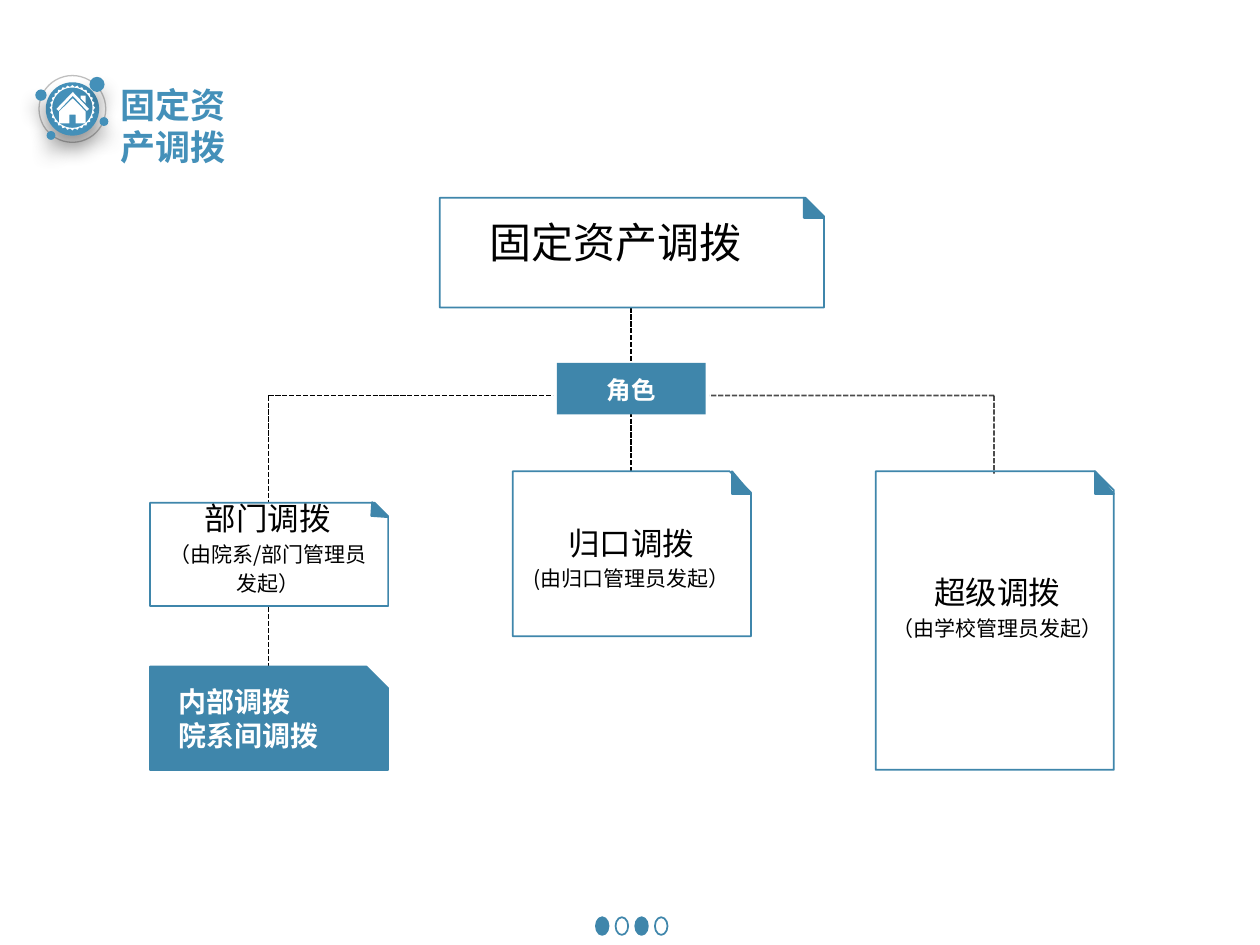
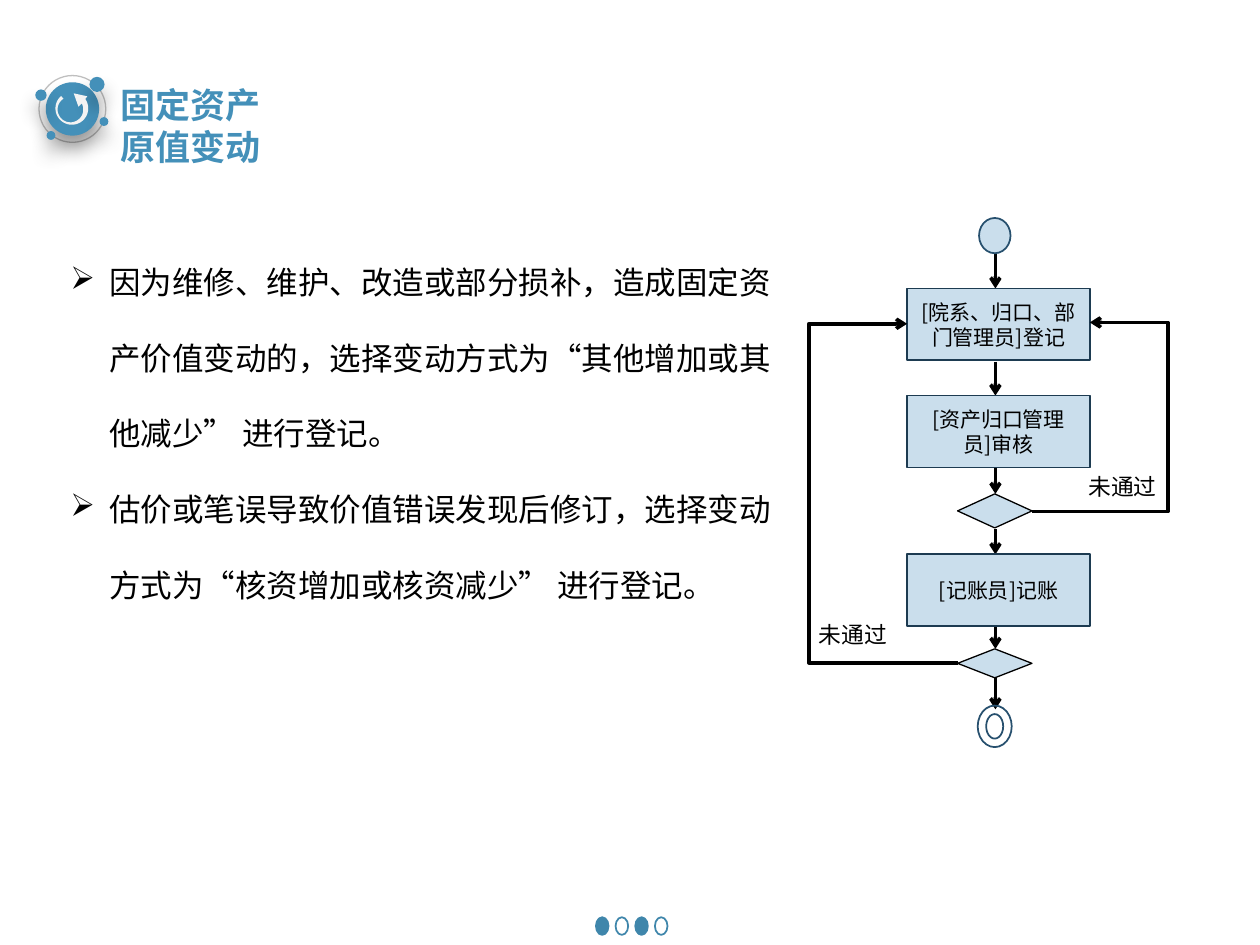
from dataclasses import dataclass
from math import cos, pi, sin
from typing import NamedTuple

from lxml import etree
from pptx import Presentation
from pptx.dml.color import RGBColor
from pptx.enum.dml import MSO_LINE
from pptx.enum.shapes import MSO_CONNECTOR, MSO_SHAPE
from pptx.enum.text import MSO_ANCHOR, PP_ALIGN
from pptx.oxml.ns import qn
from pptx.util import Emu, Inches, Pt

ELLIPSE, RECTANGLE, DIAMOND = MSO_SHAPE.OVAL, MSO_SHAPE.RECTANGLE, MSO_SHAPE.DIAMOND
SNIPPED, FOLD, DONUT = MSO_SHAPE.SNIP_1_RECTANGLE, MSO_SHAPE.RIGHT_TRIANGLE, MSO_SHAPE.DONUT
STRAIGHT, ELBOW = MSO_CONNECTOR.STRAIGHT, MSO_CONNECTOR.ELBOW
LEFT, CENTER = PP_ALIGN.LEFT, PP_ALIGN.CENTER
TOP, MIDDLE = MSO_ANCHOR.TOP, MSO_ANCHOR.MIDDLE
DASH = MSO_LINE.SQUARE_DOT

FONT = "Noto Sans CJK SC"
COLORS = {
    "theme": "3F86AB", "title": "4490B9", "ring": "BFBFBF", "step": "CADEEC",
    "step_edge": "1D3B51", "end_edge": "27506E", "black": "000000",
    "white": "FFFFFF", "arrow": "F3F3F3",
}

# The slide is a grid of 100 columns by 75 square rows
SLIDE_WIDTH, SLIDE_HEIGHT = Inches(10), Inches(7.5)
CELL = SLIDE_WIDTH // 100

Point = tuple[float, float]


class Box(NamedTuple):
    left: float
    top: float
    width: float
    height: float


class Line(NamedTuple):
    text: str
    size: float
    color: str = "black"
    bold: bool = False


@dataclass
class TextStyle:
    align: PP_ALIGN = LEFT
    anchor: MSO_ANCHOR = TOP
    inset: bool = True
    wrap: bool = True
    spacing: float = 1.0
    gap: float = 0.0
    bullet: str = ""


@dataclass
class Card:
    box: Box
    fold: Box
    text_box: Box
    lines: list[Line]
    snip: float = 0.13
    fold_turn: float = 0
    filled: bool = True


@dataclass
class Link:
    begin: Point
    end: Point
    arrow: bool = False
    opacity: int = 100
    elbow: float | None = None


PLAIN = TextStyle()
TITLE = TextStyle(wrap=False)
CARD_TEXT = TextStyle(CENTER, MIDDLE, inset=False, gap=2.4)
HEADING = TextStyle(CENTER, inset=False, spacing=0.9)
STEP_TEXT = TextStyle(CENTER, MIDDLE)
BULLETS = TextStyle(spacing=2.0, bullet="➢")


def grid(cells: float) -> Emu:
    return Emu(round(cells * CELL))


def rgb(name: str) -> RGBColor:
    return RGBColor.from_string(COLORS[name])


def add_child(parent, tag: str, **attributes):
    child = etree.SubElement(parent, qn(tag))
    for key, value in attributes.items():
        child.set(key, str(value))
    return child


# Text
def write(shape, lines: list[Line], style: TextStyle) -> None:
    frame = shape.text_frame
    frame.word_wrap = style.wrap
    frame.vertical_anchor = style.anchor
    if not style.inset:
        frame.margin_left = frame.margin_right = frame.margin_top = frame.margin_bottom = 0
    for index, line in enumerate(lines):
        paragraph = frame.add_paragraph() if index else frame.paragraphs[0]
        paragraph.alignment = style.align
        paragraph.line_spacing = style.spacing
        if index and style.gap:
            paragraph.space_before = Pt(style.gap)
        if style.bullet:
            properties = paragraph._p.get_or_add_pPr()
            properties.set("marL", str(grid(3.1)))
            properties.set("indent", str(-grid(3.1)))
            add_child(properties, "a:buChar", char=style.bullet)
        run = paragraph.add_run()
        run.text = line.text
        run.font.size = Pt(line.size)
        run.font.bold = line.bold
        run.font.color.rgb = rgb(line.color)
        run.font.name = FONT
        add_child(run._r.get_or_add_rPr(), "a:ea", typeface=FONT)


def add_text(slide, box: Box, lines: list[Line], style: TextStyle = PLAIN) -> None:
    write(slide.shapes.add_textbox(*map(grid, box)), lines, style)


# Shapes and lines
def paint(shape, fill: str | None, edge: str | None, width: float = 1) -> None:
    shape.shadow.inherit = False
    if fill:
        shape.fill.solid()
        shape.fill.fore_color.rgb = rgb(fill)
    else:
        shape.fill.background()
    if edge:
        shape.line.color.rgb = rgb(edge)
        shape.line.width = Pt(width)
    else:
        shape.line.fill.background()


def add_shape(slide, kind, box: Box, fill: str | None, edge: str | None, width: float = 1):
    shape = slide.shapes.add_shape(kind, *map(grid, box))
    paint(shape, fill, edge, width)
    return shape


def add_shadow(shape) -> None:
    effects = shape._element.spPr.find(qn("a:effectLst"))
    shadow = add_child(effects, "a:outerShdw", blurRad=Pt(11), dist=Pt(8),
                       dir=90 * 60000, algn="t", rotWithShape=0)
    color = add_child(shadow, "a:srgbClr", val=COLORS["black"])
    add_child(color, "a:alpha", val=40000)


def add_link(slide, link: Link) -> None:
    kind = STRAIGHT if link.elbow is None else ELBOW
    connector = slide.shapes.add_connector(kind, *map(grid, link.begin + link.end))
    connector.line.color.rgb = rgb("black")
    connector.line.width = Pt(0 if link.arrow else 1)
    properties = connector._element.spPr
    outline = properties.find(qn("a:ln"))
    if link.arrow:
        add_child(outline, "a:tailEnd", type="arrow")
    else:
        connector.line.dash_style = DASH
    if link.opacity < 100:
        add_child(outline.find(f".//{qn('a:srgbClr')}"), "a:alpha", val=link.opacity * 1000)
    if link.elbow is not None:
        share = (link.elbow - link.begin[0]) / (link.end[0] - link.begin[0])
        guides = properties.find(qn("a:prstGeom")).find(qn("a:avLst"))
        add_child(guides, "a:gd", name="adj1", fmla=f"val {round(share * 100000)}")
    add_child(properties, "a:effectLst")


def add_outline(slide, contours: list[list[Point]], fill: str):
    scaled = [[(grid(x), grid(y)) for x, y in contour] for contour in contours]
    builder = slide.shapes.build_freeform(*scaled[0][0], scale=1.0)
    builder.add_line_segments(scaled[0][1:], close=True)
    for contour in scaled[1:]:
        builder.move_to(*contour[0])
        builder.add_line_segments(contour[1:], close=True)
    shape = builder.convert_to_shape()
    paint(shape, fill, None)
    return shape


def arc(center: Point, radius: float, start: float, stop: float, steps: int,
        ripple: float = 0) -> list[Point]:
    """Points along an arc in degrees; every second one is pulled in by ripple."""
    points = []
    for step in range(steps + 1):
        angle = (start + (stop - start) * step / steps) * pi / 180
        reach = radius - ripple * (step % 2)
        points.append((center[0] + reach * cos(angle), center[1] + reach * sin(angle)))
    return points


# Icons
def add_house(slide) -> None:
    center = (5.75, 8.55)
    add_outline(slide, [arc(center, 1.8, 0, 360, 56, ripple=0.14),
                        arc(center, 1.6, 0, 360, 48)], "white")
    walls = [(5.78, 7.8), (6.8, 8.85), (6.8, 9.8), (6, 9.8), (6, 9.1),
             (5.5, 9.1), (5.5, 9.8), (4.7, 9.8), (4.7, 8.85)]
    chimney = [(6.4, 7.6), (6.8, 7.6), (6.8, 8.2), (6.4, 7.8)]
    roof = [(5.78, 7.3), (7.07, 8.65), (6.9, 8.8), (5.78, 7.6), (4.65, 8.8), (4.48, 8.65)]
    add_outline(slide, [walls, chimney, roof], "white")


def add_turn_arrow(slide) -> None:
    outer = arc((5.7, 8.6), 1.3, -42, 222, 40)
    inner = arc((5.6, 8.7), 1.02, 230, -35, 40)
    head = [(6.2, 8.4), (5.7, 7.4), (6.8, 7.5)]
    add_outline(slide, [outer + inner + head], "arrow").rotation = 7


# What both slides share: title, badge and footer dots
def add_frame(slide, title: str, add_icon) -> None:
    for index in range(4):
        add_shape(slide, ELLIPSE, Box(47.3 + 1.56 * index, 72.8, 1, 1.4),
                  None if index % 2 else "theme", "theme")
    add_text(slide, Box(8.6, 6.1, 1.67 * len(title) * 2 / 1.2 / 2 + 2, 4.3),
             [Line(title, 20, "title", True)], TITLE)
    add_shape(slide, ELLIPSE, Box(3.1, 6, 5.3, 5.3), None, "ring", 0.75)
    add_shadow(add_shape(slide, ELLIPSE, Box(3.7, 6.6, 4.1, 4.1), "title", "title"))
    for left, top, size in ((7.1, 6.1, 1.2), (2.8, 7.1, 0.9), (3.7, 10.4, 0.7), (7.9, 9.3, 0.7)):
        add_shadow(add_shape(slide, ELLIPSE, Box(left, top, size, size), "title", None))
    add_icon(slide)


def add_card(slide, card: Card, style: TextStyle) -> None:
    body = add_shape(slide, SNIPPED, card.box, "white" if card.filled else None, "theme")
    body.adjustments[0] = card.snip
    add_shape(slide, FOLD, card.fold, "theme", "theme").rotation = card.fold_turn
    add_text(slide, card.text_box, card.lines, style)


# Slide 1: transfer roles
def build_transfer(slide) -> None:
    add_frame(slide, "固定资产调拨", add_house)
    left, middle, right, branch = 21.3, 50.1, 78.9, 31.4
    for link in (
        Link((middle, 24.4), (middle, 44.4)),
        Link((left, 48.2), (left, 56.7)),
        Link((right, branch), (56.3, branch), opacity=70),
        Link((right, branch), (right, 37.6), opacity=70),
        Link((left, branch), (43.9, branch)),
        Link((left, branch), (left, 39.9)),
    ):
        add_link(slide, link)
    add_shape(slide, RECTANGLE, Box(44.2, 28.8, 11.8, 4.1), "theme", None)
    add_text(slide, Box(45.2, 29.7, 9.8, 2.4), [Line("角色", 14, "white", True)], CARD_TEXT)

    add_card(slide, Card(Box(34.9, 15.7, 30.5, 8.7), Box(63.8, 15.7, 1.6, 1.6),
                         Box(35.8, 17.6, 26.1, 3.6), [Line("固定资产调拨", 24)], 0.17), HEADING)
    for card in (
        Card(Box(40.7, 37.4, 18.9, 13.1), Box(58.1, 37.4, 1.5, 1.8), Box(42.1, 41.5, 16, 5.5),
             [Line("归口调拨", 18), Line("(由归口管理员发起）", 12)]),
        Card(Box(11.9, 39.9, 18.9, 8.2), Box(29.5, 39.9, 1.3, 1.1), Box(12.2, 39.5, 18.1, 7.9),
             [Line("部门调拨", 18), Line("（由院系/部门管理员", 12), Line("发起）", 12)],
             fold_turn=4, filled=False),
        Card(Box(69.5, 37.4, 18.9, 23.7), Box(86.9, 37.4, 1.5, 1.8), Box(70.5, 45.4, 17.3, 5.5),
             [Line("超级调拨", 18), Line("（由学校管理员发起）", 12)], 0.08, filled=False),
    ):
        add_card(slide, card, CARD_TEXT)

    kinds = add_shape(slide, SNIPPED, Box(11.9, 52.9, 18.9, 8.2), "theme", "theme")
    kinds.adjustments[0] = 0.21
    add_text(slide, Box(14.2, 54.3, 14.2, 5.4),
             [Line(text, 16, "white", True) for text in ("内部调拨", "院系间调拨")],
             TextStyle(anchor=MIDDLE, inset=False))


# Slide 2: change of original value
def build_value_change(slide) -> None:
    axis = 79
    for top, bottom in ((20.1, 22.9), (42, 44), (28.7, 31.4), (37.1, 39.2),
                        (53.7, 56.3), (49.7, 51.5)):
        add_link(slide, Link((axis, top), (axis, bottom), arrow=True))
    for top, text in ((22.9, "[院系、归口、部门管理员]登记"), (31.4, "[资产归口管理员]审核"),
                      (44, "[记账员]记账")):
        step = add_shape(slide, RECTANGLE, Box(72, top, 14.5, 5.7), "step", "step_edge")
        write(step, [Line(text, 12)], STEP_TEXT)
    for top, height in ((39.2, 2.7), (51.5, 2.3)):
        add_shape(slide, DIAMOND, Box(76, top, 5.9, height), "step", "black", 0.75)
    add_link(slide, Link((76, 52.6), (72, 25.7), arrow=True, elbow=64.2))
    add_link(slide, Link((81.9, 40.6), (86.5, 25.6), arrow=True, elbow=92.7))
    add_shape(slide, DONUT, Box(77.6, 56, 2.7, 3.3), None, "end_edge")
    add_shape(slide, ELLIPSE, Box(77.7, 17.3, 2.5, 2.8), "step", "end_edge")
    for left, top in ((85.4, 37), (64, 48.8)):
        add_text(slide, Box(left, top, 9.2, 3.2), [Line("未通过", 13)])
    add_frame(slide, "固定资产原值变动", add_turn_arrow)
    add_text(slide, Box(4.6, 17.4, 58.9, 31.3), [
        Line("因为维修、维护、改造或部分损补，造成固定资产价值变动的，"
             "选择变动方式为“其他增加或其他减少” 进行登记。", 18),
        Line("估价或笔误导致价值错误发现后修订，选择变动方式为“核资增加或核资减少” 进行登记。", 18),
    ], BULLETS)


def main() -> None:
    presentation = Presentation()
    presentation.slide_width, presentation.slide_height = SLIDE_WIDTH, SLIDE_HEIGHT
    blank = presentation.slide_layouts[6]
    for build in (build_transfer, build_value_change):
        build(presentation.slides.add_slide(blank))
    presentation.save("out.pptx")


if __name__ == "__main__":
    main()
